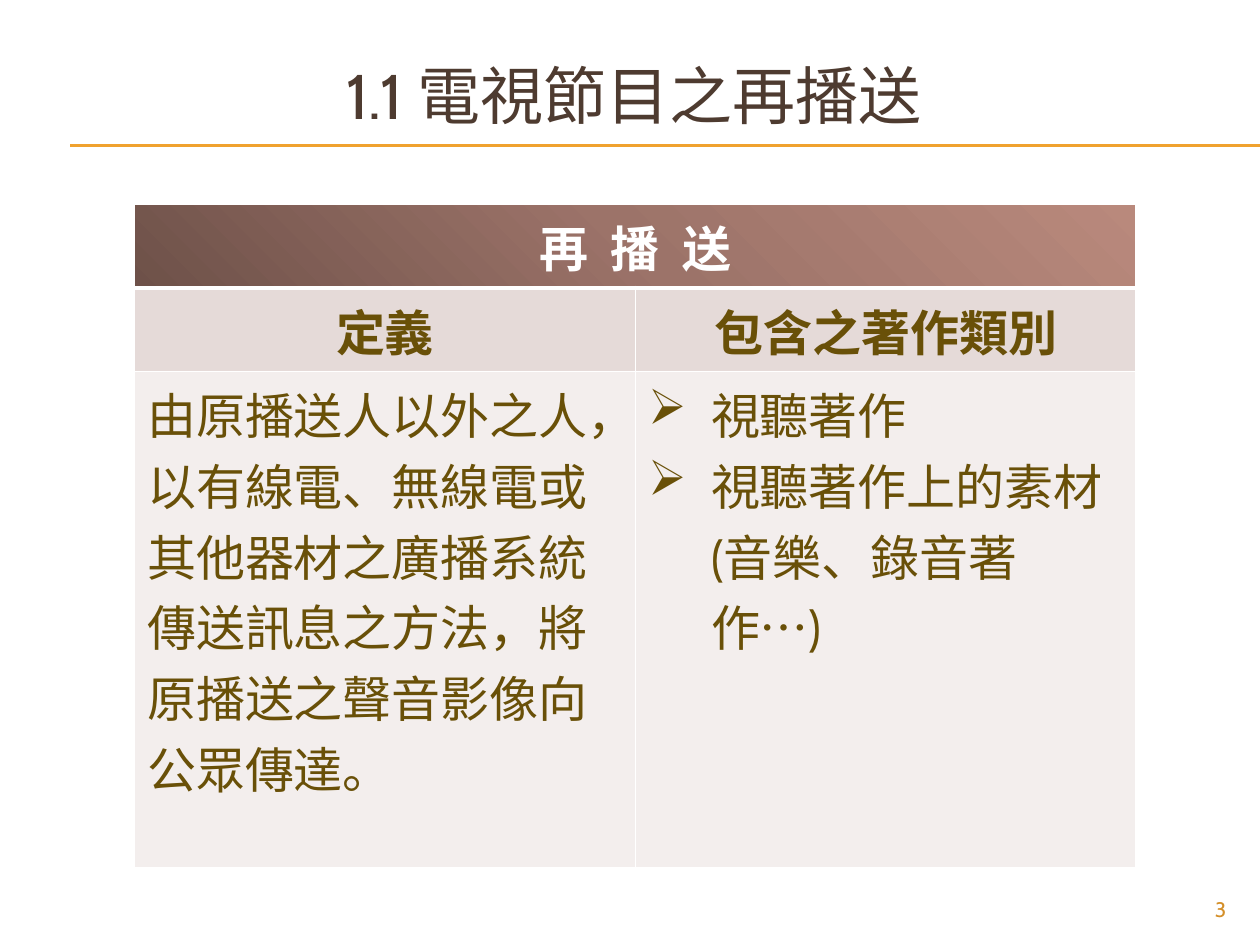
from pptx import Presentation
from pptx.dml.color import RGBColor
from pptx.enum.shapes import MSO_CONNECTOR
from pptx.enum.text import MSO_ANCHOR, PP_ALIGN
from pptx.oxml import parse_xml
from pptx.oxml.ns import nsdecls
from pptx.util import Pt

LEFT, CENTER, RIGHT = PP_ALIGN.LEFT, PP_ALIGN.CENTER, PP_ALIGN.RIGHT
TOP, MIDDLE = MSO_ANCHOR.TOP, MSO_ANCHOR.MIDDLE
STRAIGHT = MSO_CONNECTOR.STRAIGHT

FONT = "Cabin"
WHITE = RGBColor(0xFF, 0xFF, 0xFF)
BROWN = RGBColor(0x4E, 0x3B, 0x30)
OLIVE = RGBColor(0x69, 0x50, 0x08)
GOLD = RGBColor(0xF0, 0xA2, 0x2E)
AMBER = RGBColor(0xD4, 0x8F, 0x29)
HEAD_FILL = RGBColor(0xE5, 0xDA, 0xD8)
BODY_FILL = RGBColor(0xF3, 0xEE, 0xED)
BANNER_STOPS = [(0, "6E5149"), (50, "9C7369"), (100, "B9897C")]

TITLE = "1.1 電視節目之再播送"
PAGE = "3"
BANNER = "再  播  送"
HEADS = ["定義", "包含之著作類別"]
DEFINITION = ["由原播送人以外之人，以有線電、無線電或其他器材之廣播系統傳送訊息之方法，"
              "將原播送之聲音影像向公眾傳達。"]
WORKS = ["視聽著作", "視聽著作上的素材(音樂、錄音著作…)"]

SLIDE_W, SLIDE_H = 720, 540
RULES_X, RULES_Y = 40.3, (82.8, 83.5)
TABLE_X, TABLE_Y, COL_W = 76.9, 116.9, 286.2
ROW_HEIGHTS = [47.7, 47.7, 283.5]


def write(tf, lines, size=28, color=OLIVE, bold=False, align=LEFT, bullet=None):
    tf.word_wrap = True
    for i, line in enumerate(lines):
        p = tf.paragraphs[0] if i == 0 else tf.add_paragraph()
        p.alignment = align
        if bullet:
            pPr = p._p.get_or_add_pPr()
            pPr.set("marL", str(Pt(36)))
            pPr.set("indent", str(-Pt(36)))
            pPr.append(parse_xml(f'<a:buFont {nsdecls("a")} typeface="Wingdings"/>'
                                 if bullet == "Ø" else
                                 f'<a:buChar {nsdecls("a")} char="{bullet}"/>'))
        r = p.add_run()
        r.text = line
        r.font.name, r.font.size, r.font.bold = FONT, Pt(size), bold
        r.font.color.rgb = color


def add_text(s, text, x, y, w, h, **fmt):
    tf = s.shapes.add_textbox(Pt(x), Pt(y), Pt(w), Pt(h)).text_frame
    tf.vertical_anchor = MIDDLE
    write(tf, [text], **fmt)


def add_rule(s, y):
    line = s.shapes.add_connector(STRAIGHT, Pt(RULES_X), Pt(y), Pt(SLIDE_W), Pt(y))
    line.line.color.rgb = GOLD
    line.line.width = Pt(0.75)
    line._element.spPr.append(parse_xml(f'<a:effectLst {nsdecls("a")}/>'))


def set_borders(cell, bottom=1):
    widths = {"L": 1, "R": 1, "T": 1, "B": bottom}
    for i, (side, width) in enumerate(widths.items()):
        cell._tc.get_or_add_tcPr().insert(i, parse_xml(
            f'<a:ln{side} {nsdecls("a")} w="{Pt(width)}"><a:solidFill>'
            f'<a:srgbClr val="{WHITE}"/></a:solidFill></a:ln{side}>'))


def fill_banner(cell):
    stops = "".join(f'<a:gs pos="{pos * 1000}"><a:srgbClr val="{color}"/></a:gs>'
                    for pos, color in BANNER_STOPS)
    cell._tc.get_or_add_tcPr().append(parse_xml(
        f'<a:gradFill {nsdecls("a")} rotWithShape="1"><a:gsLst>{stops}</a:gsLst>'
        f'<a:lin ang="{315 * 60000}" scaled="1"/></a:gradFill>'))


def add_works_table(s):
    table = s.shapes.add_table(3, 2, Pt(TABLE_X), Pt(TABLE_Y), Pt(2 * COL_W),
                               Pt(sum(ROW_HEIGHTS))).table
    for col in table.columns:
        col.width = Pt(COL_W)
    for row, height in zip(table.rows, ROW_HEIGHTS):
        row.height = Pt(height)

    banner = table.cell(0, 0)
    banner.merge(table.cell(0, 1))
    write(banner.text_frame, [BANNER], color=WHITE, bold=True, align=CENTER)
    for c, (head, body, bullet) in enumerate(zip(HEADS, [DEFINITION, WORKS], [None, "➢"])):
        fill_banner(table.cell(0, c))
        set_borders(table.cell(0, c), bottom=3)
        write(table.cell(1, c).text_frame, [head], bold=True, align=CENTER)
        write(table.cell(2, c).text_frame, body, bullet=bullet)
        for r, color in ((1, HEAD_FILL), (2, BODY_FILL)):
            cell = table.cell(r, c)
            cell.vertical_anchor = TOP
            cell.fill.solid()
            cell.fill.fore_color.rgb = color
            set_borders(cell)


def main():
    prs = Presentation()
    prs.slide_width, prs.slide_height = Pt(SLIDE_W), Pt(SLIDE_H)
    s = prs.slides.add_slide(prs.slide_layouts[6])
    for y in RULES_Y:
        add_rule(s, y)
    add_text(s, TITLE, 20.2, 20.9, 684, 66.2, size=36, color=BROWN, align=CENTER)
    add_works_table(s)
    add_text(s, PAGE, 648, 509.8, 59.8, 19.4, size=12, color=AMBER, align=RIGHT)
    prs.save("out.pptx")


if __name__ == "__main__":
    main()
